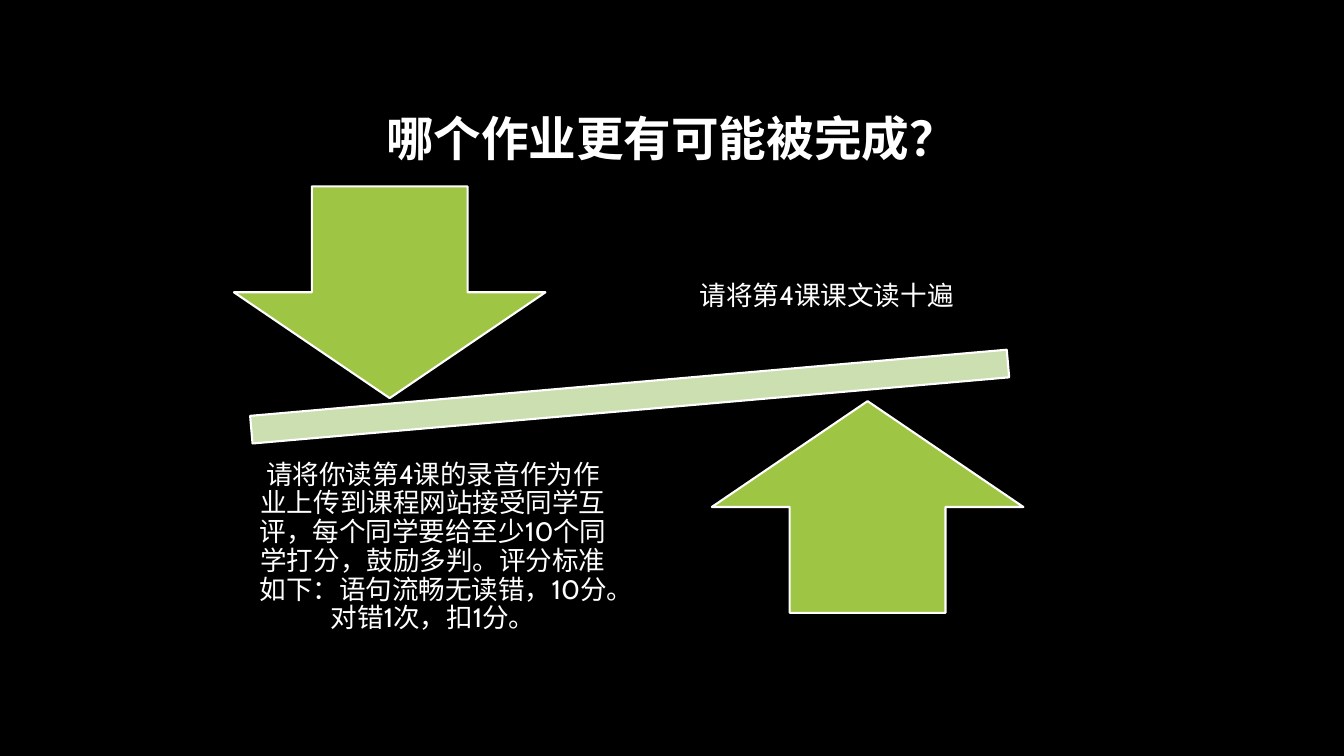
from dataclasses import dataclass

from pptx import Presentation
from pptx import util as u
from pptx.dml.color import RGBColor
from pptx.enum import lang, shapes, text

COLORS = {"background": "000000", "ink": "FFFFFF", "arrow": "9EC544", "beam": "CCDFB0"}
FONT = "Cabin"
CELL = 0.1


@dataclass(frozen=True)
class Area:
    column: float
    row: float
    columns: float
    rows: float

    def lengths(self) -> tuple:
        cells = (self.column, self.row, self.columns, self.rows)
        return tuple(u.Inches(count * CELL) for count in cells)


@dataclass(frozen=True)
class Figure:
    preset: shapes.MSO_SHAPE
    area: Area
    color: str
    rotation: float = 0


@dataclass(frozen=True)
class Assignment:
    wording: str
    area: Area


TITLE = Assignment("哪个作业更有可能被完成？", Area(10, 6.7, 113.2, 14.5))
FIGURES = [
    Figure(shapes.MSO_SHAPE.MATH_MINUS, Area(11.2, 33.5, 102.5, 11.7), "beam", 355),
    Figure(shapes.MSO_SHAPE.DOWN_ARROW, Area(23.2, 18.5, 30.9, 21), "arrow"),
    Figure(shapes.MSO_SHAPE.UP_ARROW, Area(70.6, 39.8, 30.9, 21), "arrow"),
]
ASSIGNMENTS = [
    Assignment("请将第4课课文读十遍", Area(65.5, 18.5, 33, 22)),
    Assignment(
        "请将你读第4课的录音作为作业上传到课程网站接受同学互评，"
        "每个同学要给至少10个同学打分，鼓励多判。"
        "评分标准如下：语句流畅无读错，10分。对错1次，扣1分。",
        Area(24.2, 43.3, 37.5, 22),
    ),
]


def color(name: str) -> RGBColor:
    return RGBColor.from_string(COLORS[name])


def write(frame, wording: str, size: float, bold: bool = False) -> None:
    frame.text = wording
    frame.word_wrap = True
    frame.auto_size = text.MSO_AUTO_SIZE.NONE
    frame.vertical_anchor = text.MSO_ANCHOR.MIDDLE
    paragraph = frame.paragraphs[0]
    paragraph.alignment = text.PP_ALIGN.CENTER
    paragraph.line_spacing = 0.9
    font = paragraph.runs[0].font
    font.name = FONT
    font.size = u.Pt(size)
    font.bold = bold
    font.color.rgb = color("ink")
    font.language_id = lang.MSO_LANGUAGE_ID.SIMPLIFIED_CHINESE


def draw_title(slide, title: Assignment) -> None:
    heading = slide.shapes.title
    heading.left, heading.top, heading.width, heading.height = title.area.lengths()
    write(heading.text_frame, title.wording, 34, bold=True)


def draw_figure(slide, figure: Figure) -> None:
    shape = slide.shapes.add_shape(figure.preset, *figure.area.lengths())
    shape.rotation = figure.rotation
    shape.shadow.inherit = False
    shape.fill.solid()
    shape.fill.fore_color.rgb = color(figure.color)
    shape.line.color.rgb = color("ink")
    shape.line.width = u.Pt(1.5)


def draw_assignment(slide, assignment: Assignment) -> None:
    frame = slide.shapes.add_textbox(*assignment.area.lengths()).text_frame
    write(frame, assignment.wording, 19)
    frame.margin_left = frame.margin_right = u.Inches(0.15)
    frame.margin_top = frame.margin_bottom = u.Inches(0.15)


def main() -> None:
    deck = Presentation()
    deck.slide_width, deck.slide_height = u.Inches(13.33), u.Inches(7.5)
    slide = deck.slides.add_slide(deck.slide_layouts.get_by_name("Title Only"))
    slide.background.fill.solid()
    slide.background.fill.fore_color.rgb = color("background")
    draw_title(slide, TITLE)
    for figure in FIGURES:
        draw_figure(slide, figure)
    for assignment in ASSIGNMENTS:
        draw_assignment(slide, assignment)
    deck.save("out.pptx")


if __name__ == "__main__":
    main()
